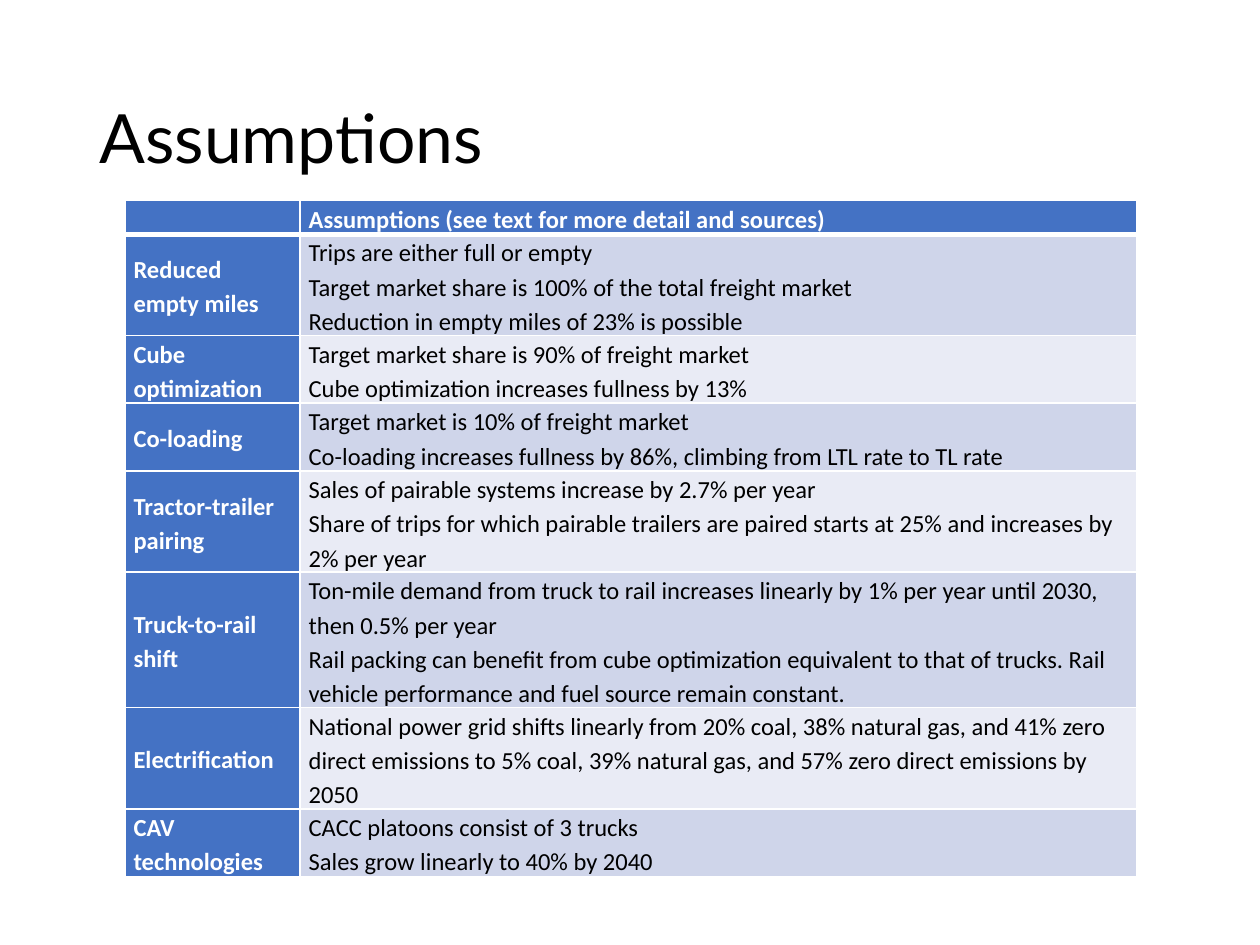
from typing import NamedTuple

from lxml.etree import SubElement
from pptx import Presentation
from pptx.dml.color import RGBColor
from pptx.enum.text import MSO_ANCHOR as Anchor
from pptx.oxml import parse_xml
from pptx.oxml.ns import nsdecls, qn
from pptx.util import Inches, Pt

SLIDE_WIDTH, SLIDE_HEIGHT = Inches(10), Inches(7.5)
LINE_HEIGHT = Inches(0.257)
COLUMN_SHARES = (0.139, 0.664)
BLUE, WHITE, BLACK = "4472C4", "FFFFFF", "000000"
BANDS = ("CFD5EA", "E9EBF5")


class Strategy(NamedTuple):
    name: str
    assumptions: tuple[str, ...]
    lines: int


STRATEGIES = (
    Strategy("Reduced empty miles", (
        "Trips are either full or empty",
        "Target market share is 100% of the total freight market",
        "Reduction in empty miles of 23% is possible"), 3),
    Strategy("Cube optimization", (
        "Target market share is 90% of freight market",
        "Cube optimization increases fullness by 13%"), 2),
    Strategy("Co-loading", (
        "Target market is 10% of freight market",
        "Co-loading increases fullness by 86%, climbing from LTL rate to TL rate"), 2),
    Strategy("Tractor-trailer pairing", (
        "Sales of pairable systems increase by 2.7% per year",
        "Share of trips for which pairable trailers are paired starts at 25% "
        "and increases by 2% per year"), 3),
    Strategy("Truck-to-rail shift", (
        "Ton-mile demand from truck to rail increases linearly by 1% per year "
        "until 2030, then 0.5% per year",
        "Rail packing can benefit from cube optimization equivalent to that of trucks. "
        "Rail vehicle performance and fuel source remain constant."), 4),
    Strategy("Electrification", (
        "National power grid shifts linearly from 20% coal, 38% natural gas, "
        "and 41% zero direct emissions to 5% coal, 39% natural gas, "
        "and 57% zero direct emissions by 2050",), 3),
    Strategy("CAV technologies", (
        "CACC platoons consist of 3 trucks",
        "Sales grow linearly to 40% by 2040"), 2),
)


def color(value: str) -> RGBColor:
    return RGBColor.from_string(value)


def format_text(text_frame, font: str, size: float, text_color: str,
                spacing: float, bold: bool = False) -> None:
    for paragraph in text_frame.paragraphs:
        paragraph.line_spacing = spacing
        for run in paragraph.runs:
            run.font.name, run.font.size, run.font.bold = font, Pt(size), bold
            run.font.color.rgb = color(text_color)


def set_borders(cell, top: float, bottom: float) -> None:
    """Give the cell white borders, with top and bottom widths in points."""
    properties = cell._tc.get_or_add_tcPr()
    for index, (side, width) in enumerate(
            (("L", 1), ("R", 1), ("T", top), ("B", bottom))):
        properties.insert(index, parse_xml(
            f'<a:ln{side} {nsdecls("a")} w="{Pt(width)}"><a:solidFill>'
            f'<a:srgbClr val="{WHITE}"/></a:solidFill></a:ln{side}>'))


def fill_cell(cell, text: str, fill: str, text_color: str, bold: bool,
              top: float = 1, bottom: float = 1) -> None:
    cell.fill.solid()
    cell.fill.fore_color.rgb = color(fill)
    set_borders(cell, top, bottom)
    cell.vertical_anchor = Anchor.MIDDLE
    cell.margin_left = cell.margin_right = Inches(0.07)
    cell.margin_top = cell.margin_bottom = 0
    cell.text_frame.text = text
    format_text(cell.text_frame, "Calibri", 14, text_color, 1.15, bold)
    if not text:  # keeps the empty cell from stretching its row
        SubElement(cell.text_frame.paragraphs[0]._p, qn("a:endParaRPr"), sz="1400")


def add_title(slide, text: str) -> None:
    box = slide.shapes.add_textbox(
        int(SLIDE_WIDTH * 0.069), int(SLIDE_HEIGHT * 0.053),
        int(SLIDE_WIDTH * 0.862), int(SLIDE_HEIGHT * 0.193))
    text_frame = box.text_frame
    text_frame.word_wrap = True
    text_frame.vertical_anchor = Anchor.MIDDLE
    text_frame.text = text
    format_text(text_frame, "Lato", 38.8, BLACK, 0.9)


def add_assumptions_table(slide) -> None:
    row_lines = [1] + [strategy.lines for strategy in STRATEGIES]
    table = slide.shapes.add_table(
        len(row_lines), len(COLUMN_SHARES),
        int(SLIDE_WIDTH * 0.099), int(SLIDE_HEIGHT * 0.212),
        int(SLIDE_WIDTH * sum(COLUMN_SHARES)), LINE_HEIGHT * sum(row_lines)).table
    for column, share in zip(table.columns, COLUMN_SHARES):
        column.width = int(SLIDE_WIDTH * share)
    for row, lines in zip(table.rows, row_lines):
        row.height = LINE_HEIGHT * lines

    headings = ("", "Assumptions (see text for more detail and sources)")
    for column, heading in enumerate(headings):
        fill_cell(table.cell(0, column), heading, BLUE, WHITE, True, bottom=3)
    for row, strategy in enumerate(STRATEGIES, start=1):
        top = 3 if row == 1 else 1
        fill_cell(table.cell(row, 0), strategy.name, BLUE, WHITE, True, top)
        fill_cell(table.cell(row, 1), "\n".join(strategy.assumptions),
                  BANDS[(row - 1) % 2], BLACK, False, top)


def main() -> None:
    presentation = Presentation()
    presentation.slide_width, presentation.slide_height = SLIDE_WIDTH, SLIDE_HEIGHT
    slide = presentation.slides.add_slide(presentation.slide_layouts[6])
    add_title(slide, "Assumptions")
    add_assumptions_table(slide)
    presentation.save("out.pptx")


if __name__ == "__main__":
    main()
